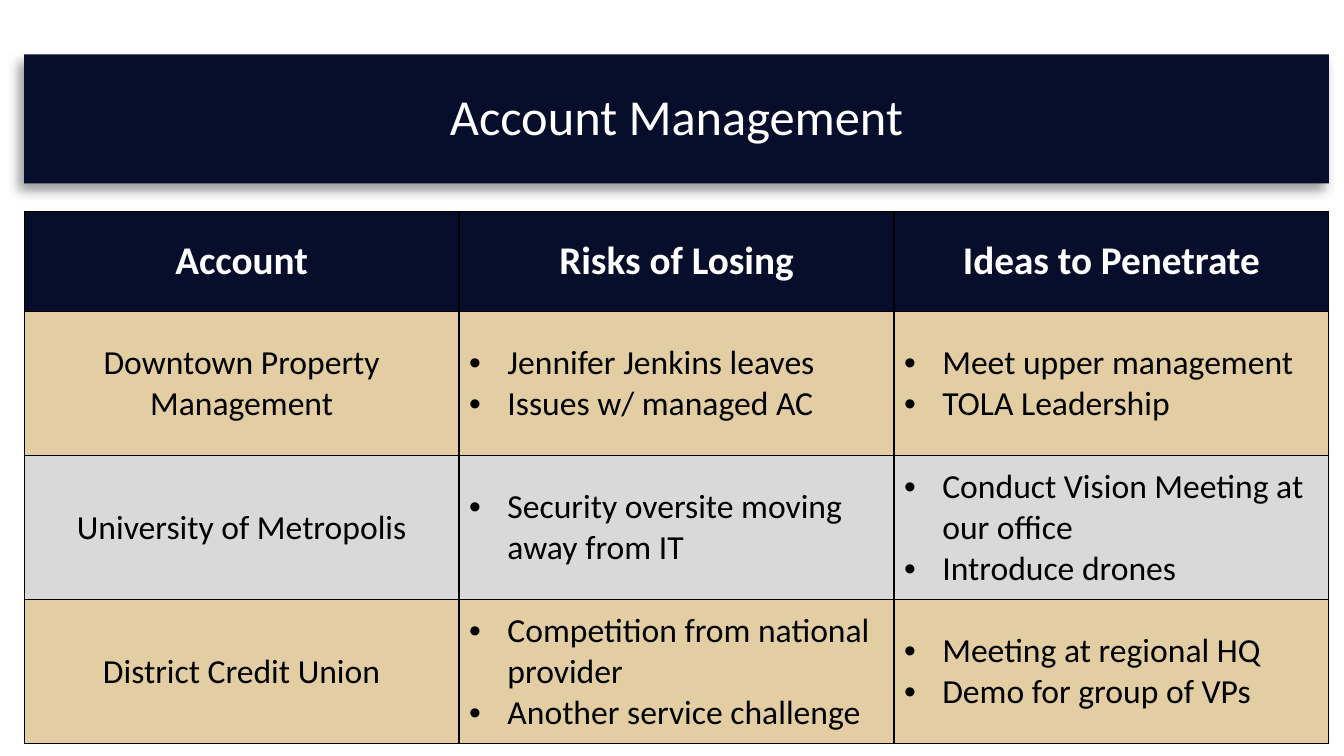
import dataclasses

import lxml.etree
import pptx
import pptx.dml.color
import pptx.enum.shapes
import pptx.enum.text
import pptx.oxml
import pptx.oxml.ns
import pptx.util

Inches = pptx.util.Inches
Pt = pptx.util.Pt
qn = pptx.oxml.ns.qn
CENTER = pptx.enum.text.PP_ALIGN.CENTER
LEFT = pptx.enum.text.PP_ALIGN.LEFT
MIDDLE = pptx.enum.text.MSO_ANCHOR.MIDDLE


@dataclasses.dataclass(frozen=True)
class Theme:
    font: str = "Calibri"
    navy: str = "070E2B"
    sand: str = "E3CEA3"
    gray: str = "D9D9D9"
    white: str = "FFFFFF"
    black: str = "000000"
    title_size: int = 36
    header_size: int = 28
    body_size: int = 24
    border_width: int = 1


def rgb(color):
    return pptx.dml.color.RGBColor.from_string(color)


def add_solid_fill(parent, color):
    fill = lxml.etree.SubElement(parent, qn("a:solidFill"))
    return lxml.etree.SubElement(fill, qn("a:srgbClr"), val=color)


class SlideBuilder:
    def __init__(self, slide, theme):
        self.slide = slide
        self.theme = theme

    def style(self, paragraph, size, color, bold=False, alignment=CENTER):
        paragraph.alignment = alignment
        font = paragraph.font
        font.name = self.theme.font
        font.size = Pt(size)
        font.bold = bold
        font.color.rgb = rgb(color)

    def banner(self, text, left, top, width, height):
        box = self.slide.shapes.add_shape(
            pptx.enum.shapes.MSO_SHAPE.RECTANGLE,
            Inches(left), Inches(top), Inches(width), Inches(height))
        box.fill.solid()
        box.fill.fore_color.rgb = rgb(self.theme.navy)
        box.line.fill.background()
        self.drop_shadow(box)
        frame = box.text_frame
        frame.word_wrap = True
        frame.vertical_anchor = MIDDLE
        paragraph = frame.paragraphs[0]
        paragraph.text = text
        paragraph.line_spacing = 0.9
        self.style(paragraph, self.theme.title_size, self.theme.white)

    def drop_shadow(self, box):
        box.shadow.inherit = False
        effects = box.element.spPr.find(qn("a:effectLst"))
        shadow = lxml.etree.SubElement(
            effects, qn("a:outerShdw"), blurRad=str(Pt(8)), dist=str(Pt(6)),
            dir=str(135 * 60000), algn="tr", rotWithShape="0")
        color = lxml.etree.SubElement(shadow, qn("a:srgbClr"), val=self.theme.black)
        lxml.etree.SubElement(color, qn("a:alpha"), val="40000")

    def table(self, headers, rows, left, top, width, header_height, row_height):
        height = header_height + row_height * len(rows)
        table = self.slide.shapes.add_table(
            len(rows) + 1, len(headers),
            Inches(left), Inches(top), Inches(width), Inches(height)).table
        for row in table.rows:
            row.height = Inches(row_height)
        table.rows[0].height = Inches(header_height)

        # Header row
        for column, header in enumerate(headers):
            self.cell(table.cell(0, column), [header], self.theme.navy,
                      self.theme.header_size, self.theme.white, bold=True)

        # Body rows in alternating colours; lists are bulleted
        bands = (self.theme.sand, self.theme.gray)
        for index, (account, *lists) in enumerate(rows):
            band = bands[index % 2]
            for column, lines in enumerate([[account], *lists]):
                self.cell(table.cell(index + 1, column), lines, band,
                          self.theme.body_size, self.theme.black,
                          bulleted=column > 0)

    def cell(self, cell, lines, fill, size, color, bold=False, bulleted=False):
        self.borders(cell)
        cell.fill.solid()
        cell.fill.fore_color.rgb = rgb(fill)
        cell.vertical_anchor = MIDDLE
        cell.text = "\n".join(lines)
        for paragraph in cell.text_frame.paragraphs:
            self.style(paragraph, size, color, bold, LEFT if bulleted else CENTER)
            if bulleted:
                self.bullet(paragraph)

    def borders(self, cell):
        properties = cell._tc.get_or_add_tcPr()
        for side in ("L", "R", "T", "B"):
            line = lxml.etree.SubElement(
                properties, qn("a:ln" + side), w=str(Pt(self.theme.border_width)))
            add_solid_fill(line, self.theme.black)

    def bullet(self, paragraph):
        properties = paragraph._p.get_or_add_pPr()
        properties.set("marL", str(Inches(0.38)))
        properties.set("indent", str(Inches(-0.38)))
        mark_font = pptx.oxml.parse_xml(
            f'<a:buFont {pptx.oxml.ns.nsdecls("a")} typeface="Arial"/>')
        mark = pptx.oxml.parse_xml(
            f'<a:buChar {pptx.oxml.ns.nsdecls("a")} char="•"/>')
        # Bullet elements come ahead of the default run properties
        properties.find(qn("a:defRPr")).addprevious(mark_font)
        mark_font.addnext(mark)


HEADERS = ["Account", "Risks of Losing", "Ideas to Penetrate"]
ACCOUNTS = [
    ("Downtown Property Management",
     ["Jennifer Jenkins leaves", "Issues w/ managed AC"],
     ["Meet upper management", "TOLA Leadership"]),
    ("University of Metropolis",
     ["Security oversite moving away from IT"],
     ["Conduct Vision Meeting at our office", "Introduce drones"]),
    ("District Credit Union",
     ["Competition from national provider", "Another service challenge"],
     ["Meeting at regional HQ", "Demo for group of VPs"]),
]


def main():
    deck = pptx.Presentation()
    deck.slide_width = Inches(13.33)
    deck.slide_height = Inches(7.5)
    page = deck.slides.add_slide(deck.slide_layouts[6])
    builder = SlideBuilder(page, Theme())

    left, width = 0.24, 12.94
    builder.banner("Account Management", left, 0.54, width, 1.28)
    builder.table(HEADERS, ACCOUNTS, left, 2.1, width,
                  header_height=0.99, row_height=1.43)
    deck.save("out.pptx")


if __name__ == "__main__":
    main()
